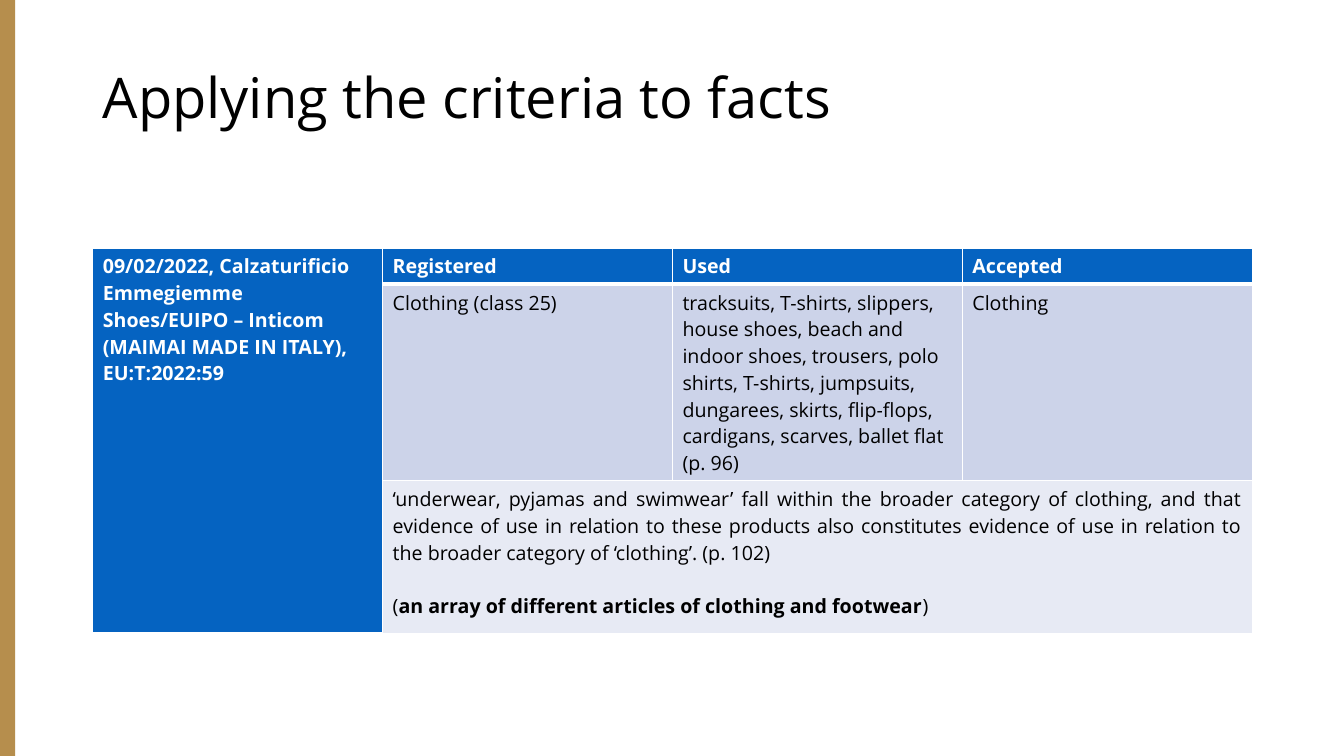
"""Builds the slide 'Applying the criteria to facts' with its case table."""
from lxml import etree
from pptx import Presentation
from pptx.dml.color import RGBColor
from pptx.enum.shapes import MSO_SHAPE
from pptx.enum.text import MSO_ANCHOR, PP_ALIGN
from pptx.oxml.ns import qn
from pptx.util import Inches, Pt

RECT = MSO_SHAPE.RECTANGLE
MIDDLE = MSO_ANCHOR.MIDDLE
JUSTIFY = PP_ALIGN.JUSTIFY
FONT = "Open Sans"
GOLD = RGBColor(0xB6, 0x8E, 0x4D)
BLUE = RGBColor(0x05, 0x63, 0xC1)
MID_BAND = RGBColor(0xCC, 0xD3, 0xE9)
LIGHT_BAND = RGBColor(0xE7, 0xEA, 0xF4)
WHITE = RGBColor(0xFF, 0xFF, 0xFF)
BLACK = RGBColor(0, 0, 0)
HEADER = {"size": Pt(14), "bold": True, "color": WHITE}
BODY = {"size": Pt(14), "bold": False, "color": BLACK}
STRONG = {**BODY, "bold": True}
TITLE = {**BODY, "size": Pt(40)}


def add_run(p, text, style):
    r = p.add_run()
    r.text = text
    r.font.name = FONT
    r.font.color.rgb = style["color"]
    for name in ("size", "bold"):
        setattr(r.font, name, style[name])


def add_border(cell, index, side, width):
    ln = etree.Element(qn(f"a:ln{side}"), w=str(Pt(width)))
    fill = etree.SubElement(ln, qn("a:solidFill"))
    etree.SubElement(fill, qn("a:srgbClr"), val=str(WHITE))
    cell._tc.get_or_add_tcPr().insert(index, ln)


prs = Presentation()
prs.slide_width, prs.slide_height = Inches(13.33), Inches(7.5)
s = prs.slides.add_slide(prs.slide_layouts[6])

bar = s.shapes.add_shape(RECT, 0, 0, Inches(0.15), prs.slide_height)
bar.shadow.inherit = False
bar.fill.solid()
bar.fill.fore_color.rgb = GOLD
bar.line.fill.background()

title = s.shapes.add_textbox(Inches(0.92), Inches(0.4), Inches(11.5), Inches(1.19))
tf = title.text_frame
tf.word_wrap = True
tf.vertical_anchor = MIDDLE
p = tf.paragraphs[0]
p.line_spacing = 0.9
add_run(p, "Applying the criteria to facts", TITLE)

row_heights = [0.36, 1.95, 1.52]
table = s.shapes.add_table(3, 4, Inches(0.92), Inches(2.46),
                           Inches(11.5), Inches(sum(row_heights))).table
for row, height in zip(table.rows, row_heights):
    row.height = Inches(height)
table.cell(0, 0).merge(table.cell(2, 0))
table.cell(2, 1).merge(table.cell(2, 3))

rows = [
    ["09/02/2022, Calzaturificio Emmegiemme Shoes/EUIPO – Inticom "
     "(MAIMAI MADE IN ITALY), EU:T:2022:59", "Registered", "Used", "Accepted"],
    ["", "Clothing (class 25)",
     "tracksuits, T-shirts, slippers, house shoes, beach and indoor shoes, "
     "trousers, polo shirts, T-shirts, jumpsuits, dungarees, skirts, flip-flops, "
     "cardigans, scarves, ballet flat (p. 96)", "Clothing"],
    ["", "‘underwear, pyjamas and swimwear’ fall within the broader category of "
     "clothing, and that evidence of use in relation to these products also "
     "constitutes evidence of use in relation to the broader category of "
     "‘clothing’. (p. 102)", "", ""],
]
row_fills = [BLUE, MID_BAND, LIGHT_BAND]
for i, texts in enumerate(rows):
    for j, text in enumerate(texts):
        cell = table.cell(i, j)
        cell.fill.solid()
        cell.fill.fore_color.rgb = BLUE if j == 0 else row_fills[i]
        widths = {"L": 1, "R": 1, "T": 3 if i == 1 else 1, "B": 3 if i == 0 else 1}
        for index, (side, width) in enumerate(widths.items()):
            add_border(cell, index, side, width)
        if text:
            add_run(cell.text_frame.paragraphs[0], text, BODY if i else HEADER)

tf = table.cell(2, 1).text_frame
tf.paragraphs[0].alignment = JUSTIFY
p = tf.add_paragraph()
p.space_before = Pt(19)
add_run(p, "(", BODY)
add_run(p, "an array of different articles of clothing and footwear", STRONG)
add_run(p, ")", BODY)

prs.save("out.pptx")
